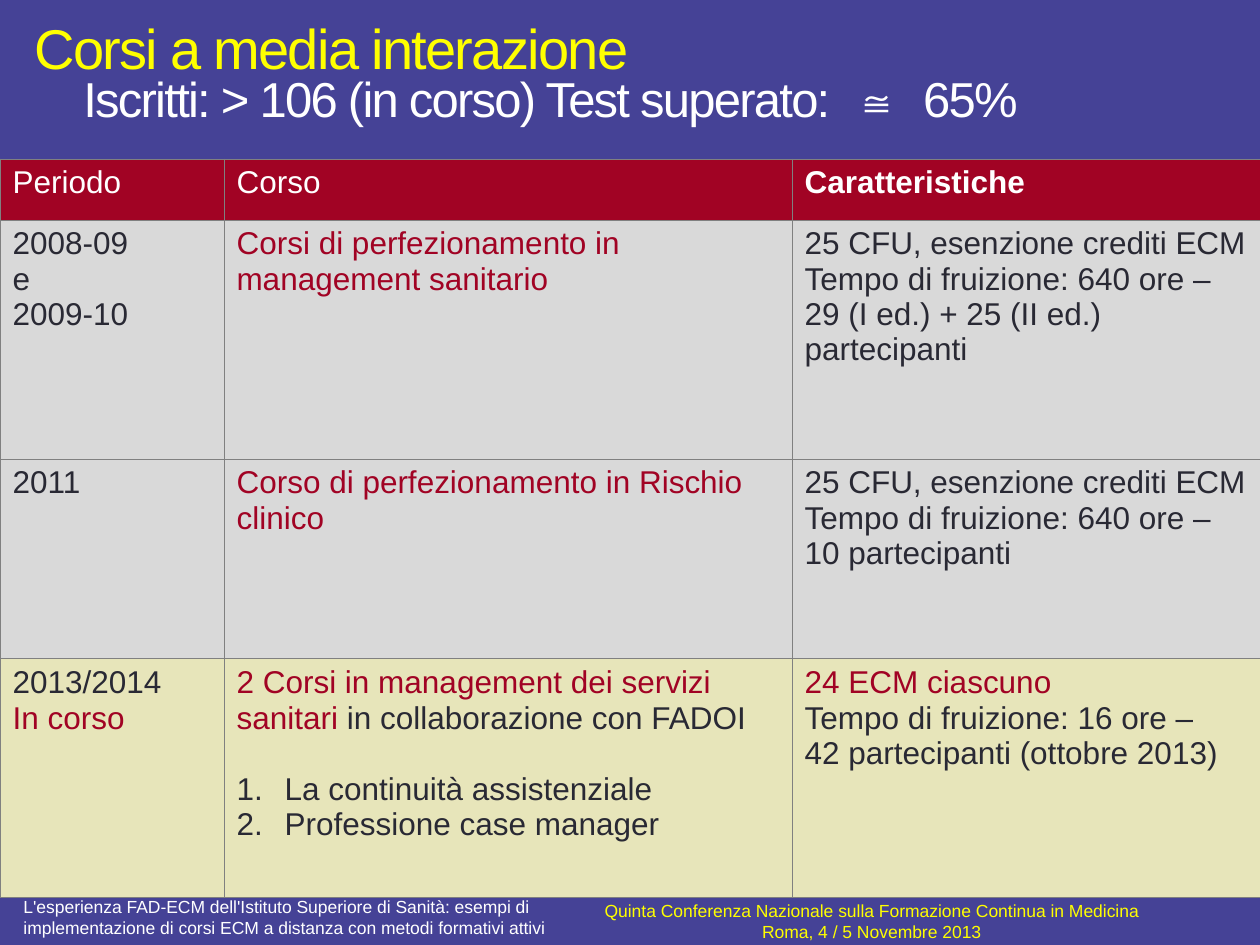
"""Build the slide on medium-interaction courses, with its table and footer."""
from dataclasses import dataclass

from pptx import Presentation
from pptx.dml.color import RGBColor
from pptx.enum.shapes import MSO_SHAPE as Shape
from pptx.enum.text import MSO_ANCHOR as Anchor, PP_ALIGN as Align
from pptx.oxml import parse_xml
from pptx.oxml.ns import nsdecls
from pptx.util import Emu, Pt

EMU_PER_PX = 914400 / 126
FONT = "Arial"
BLUE = RGBColor(0x45, 0x42, 0x96)
RED = RGBColor(0xA1, 0x03, 0x24)
GREY = RGBColor(0xD9, 0xD9, 0xD9)
CREAM = RGBColor(0xE7, 0xE5, 0xBA)
INK = RGBColor(0x29, 0x29, 0x34)
WHITE = RGBColor(0xFF, 0xFF, 0xFF)
YELLOW = RGBColor(0xFF, 0xFF, 0x00)
BORDER = "808080"
COLUMN_WIDTHS = (224, 568, 468)


@dataclass(frozen=True)
class Box:
    left: int
    top: int
    width: int
    height: int

    def emu(self) -> tuple:
        return tuple(px(n) for n in (self.left, self.top, self.width, self.height))


@dataclass(frozen=True)
class Words:
    text: str
    color: RGBColor = INK
    bold: bool = False


@dataclass(frozen=True)
class Line:
    words: tuple
    numbered: bool = False
    gap: float = 0


@dataclass(frozen=True)
class CourseRow:
    height: int
    fill: RGBColor
    cells: tuple


def px(length: int) -> Emu:
    return Emu(round(length * EMU_PER_PX))


def plain(*texts: str) -> tuple:
    return tuple(Line((Words(text),)) for text in texts)


def colored(text: str, color: RGBColor, bold: bool = False) -> tuple:
    return (Line((Words(text, color, bold),)),)


BANDS = (Box(0, 896, 1264, 50), Box(-1, 0, 1264, 159))
ROWS = (
    CourseRow(61, RED, (
        colored("Periodo", WHITE),
        colored("Corso", WHITE),
        colored("Caratteristiche", WHITE, bold=True),
    )),
    CourseRow(239, GREY, (
        plain("2008-09", "e", "2009-10"),
        colored("Corsi di perfezionamento in management sanitario", RED),
        plain("25 CFU, esenzione crediti ECM", "Tempo di fruizione: 640 ore –",
              "29 (I ed.) + 25 (II ed.) partecipanti"),
    )),
    CourseRow(200, GREY, (
        plain("2011"),
        colored("Corso di perfezionamento in Rischio clinico", RED),
        plain("25 CFU, esenzione crediti ECM",
              "Tempo di fruizione: 640 ore – 10 partecipanti"),
    )),
    CourseRow(239, CREAM, (
        plain("2013/2014") + colored("In corso", RED),
        (
            Line((Words("2 Corsi in management dei servizi sanitari ", RED),
                  Words("in collaborazione con FADOI"))),
            Line((Words("La continuità assistenziale"),), numbered=True, gap=20.7),
            Line((Words("Professione case manager"),), numbered=True),
        ),
        colored("24 ECM ciascuno", RED)
        + plain("Tempo di fruizione: 16 ore –", "42 partecipanti (ottobre 2013)"),
    )),
)


def style(run, size: int, color: RGBColor, bold: bool = False) -> None:
    run.font.name = FONT
    run.font.size = Pt(size)
    run.font.bold = bold
    run.font.color.rgb = color


def indent(paragraph, margin: int, hanging: int) -> None:
    properties = paragraph._p.get_or_add_pPr()
    properties.set("marL", str(px(margin)))
    properties.set("indent", str(-px(hanging)))


def add_band(slide, box: Box) -> None:
    band = slide.shapes.add_shape(Shape.RECTANGLE, *box.emu())
    band.shadow.inherit = False
    band.fill.solid()
    band.fill.fore_color.rgb = BLUE
    band.line.fill.background()


def add_text_frame(slide, box: Box, anchor: Anchor):
    frame = slide.shapes.add_textbox(*box.emu()).text_frame
    frame.word_wrap = True
    frame.vertical_anchor = anchor
    return frame


def add_title(slide) -> None:
    frame = add_text_frame(slide, Box(9, 9, 1135, 136), Anchor.MIDDLE)
    heading = frame.paragraphs[0]
    heading.text = "Corsi a media interazione\vIscritti: > 106 (in corso) Test superato:  ≅  65%"
    heading.line_spacing = 0.8
    indent(heading, 62, 49)
    for run, size, color in zip(heading.runs, (32, 28), (YELLOW, WHITE)):
        style(run, size, color)
        run.font._element.set("spc", "-100")


def add_footer(slide, box: Box, text: str, color: RGBColor, align: Align, anchor: Anchor):
    frame = add_text_frame(slide, box, anchor)
    frame.text = text
    for paragraph in frame.paragraphs:
        paragraph.alignment = align
        for run in paragraph.runs:
            style(run, 10, color)
    return frame


def add_borders(cell) -> None:
    properties = cell._tc.get_or_add_tcPr()
    for side in ("lnL", "lnR", "lnT", "lnB"):
        properties.append(parse_xml(
            f'<a:{side} {nsdecls("a")} w="{Pt(0.5)}"><a:solidFill>'
            f'<a:srgbClr val="{BORDER}"/></a:solidFill></a:{side}>'))


def fill_cell(cell, lines: tuple, fill: RGBColor) -> None:
    add_borders(cell)
    cell.fill.solid()
    cell.fill.fore_color.rgb = fill
    frame = cell.text_frame
    for index, line in enumerate(lines):
        paragraph = frame.add_paragraph() if index else frame.paragraphs[0]
        if line.gap:
            paragraph.space_before = Pt(line.gap)
        if line.numbered:
            indent(paragraph, 48, 48)
            paragraph._p.get_or_add_pPr().append(parse_xml(
                f'<a:buAutoNum {nsdecls("a")} type="arabicPeriod"/>'))
        for words in line.words:
            run = paragraph.add_run()
            run.text = words.text
            style(run, 18, words.color, words.bold)


def add_courses(slide) -> None:
    box = Box(0, 159, sum(COLUMN_WIDTHS), sum(row.height for row in ROWS))
    table = slide.shapes.add_table(len(ROWS), len(COLUMN_WIDTHS), *box.emu()).table
    table.first_row = table.horz_banding = False
    for column, width in zip(table.columns, COLUMN_WIDTHS):
        column.width = px(width)
    for table_row, course in zip(table.rows, ROWS):
        table_row.height = px(course.height)
        for cell, lines in zip(table_row.cells, course.cells):
            fill_cell(cell, lines, course.fill)


def main() -> None:
    deck = Presentation()
    deck.slide_width, deck.slide_height = px(1260), px(945)
    slide = deck.slides.add_slide(deck.slide_layouts[6])
    for band in BANDS:
        add_band(slide, band)
    add_title(slide)
    add_courses(slide)
    add_footer(slide, Box(586, 898, 571, 45),
               "Quinta Conferenza Nazionale sulla Formazione Continua in Medicina\n"
               "Roma, 4 / 5 Novembre 2013", YELLOW, Align.CENTER, Anchor.MIDDLE)
    report = add_footer(slide, Box(11, 896, 562, 49),
                        "L'esperienza FAD-ECM dell'Istituto Superiore di Sanità: esempi di "
                        "implementazione di corsi ECM a distanza con metodi formativi attivi",
                        WHITE, Align.LEFT, Anchor.TOP)
    report.margin_top = 0
    deck.save("out.pptx")


if __name__ == "__main__":
    main()
